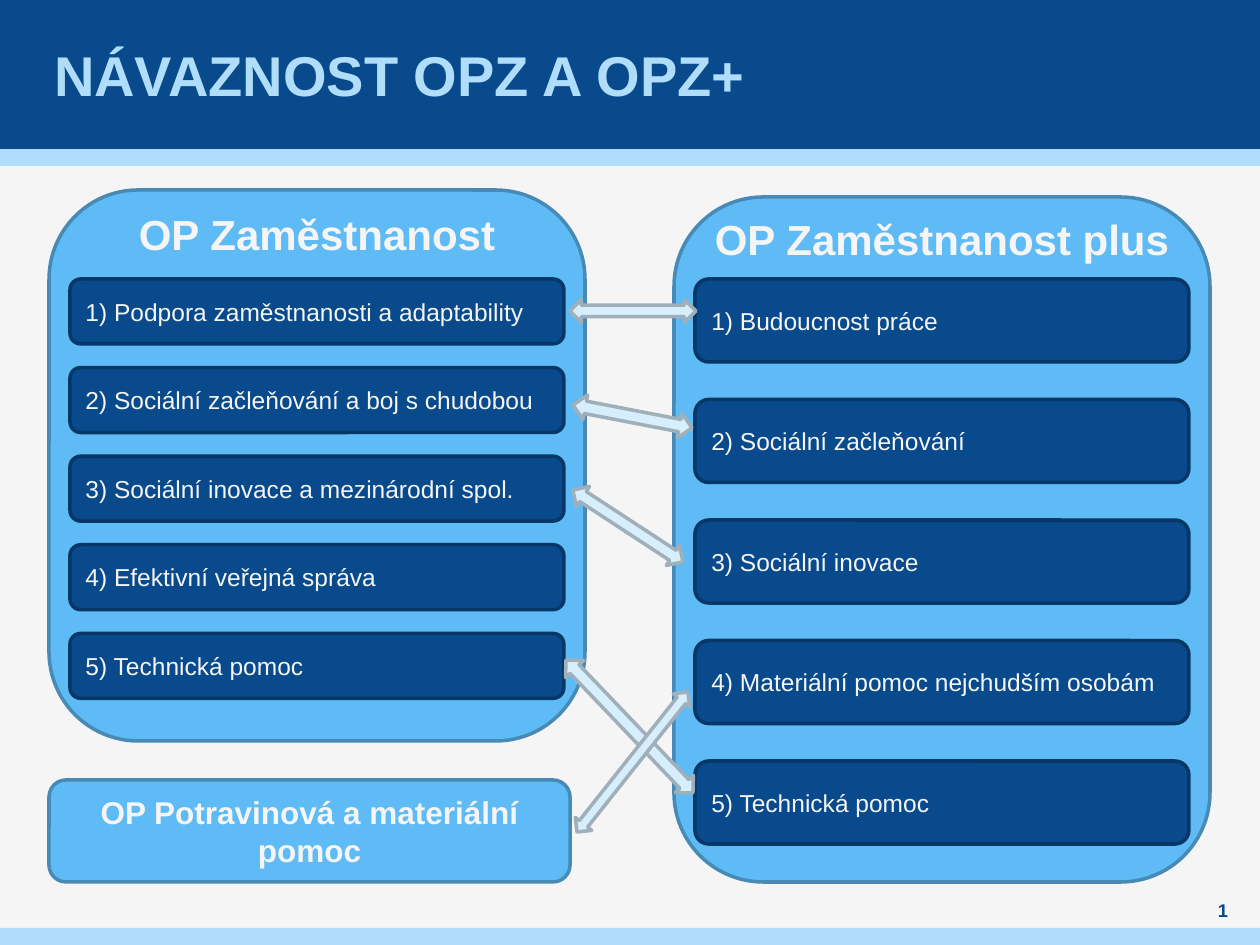
from dataclasses import dataclass
from math import atan2, degrees, hypot

from lxml.etree import SubElement
from pptx import Presentation
from pptx.dml.color import RGBColor
from pptx.enum.shapes import MSO_SHAPE as SHAPE
from pptx.enum.text import MSO_ANCHOR as ANCHOR, PP_ALIGN as ALIGN
from pptx.oxml.ns import qn
from pptx.util import Emu, Pt

TITLE = "NÁVAZNOST OPZ A OPZ+"
PAGE = "6"
FOOD_AID = "OP Potravinová a materiální pomoc"

# Areas are (left, top, width, height) in px
PROGRAMMES = [
    {
        "name": "OP Zaměstnanost",
        "panel": (49, 190, 536, 551),
        "heading_y": 234,
        "boxes": {"left": 70, "top": 279, "width": 494, "height": 65, "pitch": 88.6},
        "priorities": [
            "1) Podpora zaměstnanosti a adaptability",
            "2) Sociální začleňování a boj s chudobou",
            "3) Sociální inovace a mezinárodní spol.",
            "4) Efektivní veřejná správa",
            "5) Technická pomoc",
        ],
    },
    {
        "name": "OP Zaměstnanost plus",
        "panel": (674, 197, 536, 685),
        "heading_y": 239,
        "boxes": {"left": 695, "top": 279, "width": 494, "height": 83, "pitch": 120.5},
        "priorities": [
            "1) Budoucnost práce",
            "2) Sociální začleňování",
            "3) Sociální inovace",
            "4) Materiální pomoc nejchudším osobám",
            "5) Technická pomoc",
        ],
    },
]
FOOD_AREA = (49, 780, 521, 102)

# Links between the programmes: (start, end, thickness)
LINKS = [
    ((573, 405), (692, 428), 25),
    ((573, 490), (683, 562), 24),
    ((566, 660), (693, 793), 25),
    ((577, 832), (688, 692), 21),
    ((570, 311), (696, 311), 23),
]


@dataclass(frozen=True)
class Theme:
    font: str = "Arial"
    paper: str = "F5F5F5"
    navy: str = "084A8B"
    navy_edge: str = "063767"
    sky: str = "5FBBF5"
    sky_edge: str = "468AB5"
    pale: str = "AFDDFA"
    arrow: str = "D7EEFC"
    arrow_edge: str = "9FB0BA"
    title: float = 32
    heading: float = 24
    subheading: float = 18
    body: float = 14
    number: float = 10.5
    line: float = 2


T = Theme()
BARS = [
    ((0, 149, 1260, 17), T.pale),
    ((0, 0, 1260, 149), T.navy),
    ((0, 928, 1260, 17), T.pale),
]


def px(n):
    return Emu(round(n * 914400 / 126))


def rgb(value):
    return RGBColor.from_string(value)


def write(s, text, size, color, bold=False, align=ALIGN.LEFT, **frame):
    """Set the text of a shape; frame holds text frame attributes such as margins."""
    tf = s.text_frame
    for name, value in {"word_wrap": True, "vertical_anchor": ANCHOR.MIDDLE, **frame}.items():
        setattr(tf, name, value)
    p = tf.paragraphs[0]
    p.alignment = align
    r = p.add_run()
    r.text = text
    font = {"name": T.font, "size": Pt(size), "bold": bold}
    for name, value in font.items():
        setattr(r.font, name, value)
    r.font.color.rgb = rgb(color)
    return r


def add_shape(slide, kind, area, fill, edge=None):
    s = slide.shapes.add_shape(kind, *map(px, area))
    s.shadow.inherit = False
    s.fill.solid()
    s.fill.fore_color.rgb = rgb(fill)
    if edge:
        s.line.color.rgb = rgb(edge)
        s.line.width = Pt(T.line)
    else:
        s.line.fill.background()
    return s


def add_text(slide, area, *args, **kwargs):
    s = slide.shapes.add_textbox(*map(px, area))
    margins = dict.fromkeys(("margin_left", "margin_right", "margin_top", "margin_bottom"), 0)
    return write(s, *args, align=ALIGN.CENTER, **margins, **kwargs)


def add_title(slide):
    s = slide.shapes.title
    s.element.getparent().append(s.element)  # in front of the header bar
    s.left, s.top, s.width, s.height = map(px, (49, 0, 1160, 149))
    write(s, TITLE, T.title, T.pale, bold=True,
          margin_left=px(5), margin_right=px(5), margin_top=0, margin_bottom=0)


def add_page_number(slide):
    r = add_text(slide, (1191, 898, 64, 25), PAGE, T.number, T.navy, bold=True)
    run = r._r
    field = run.makeelement(
        qn("a:fld"), {"id": "{B6F15528-21DE-4FAA-801E-634DDDAF4B2B}", "type": "slidenum"})
    run.addprevious(field)
    field.append(run.rPr)
    SubElement(field, qn("a:t")).text = PAGE
    run.getparent().remove(run)


def add_programme(slide, name, panel, heading_y, boxes, priorities):
    add_shape(slide, SHAPE.ROUNDED_RECTANGLE, panel, T.sky, T.sky_edge)
    left, _, width, _ = panel
    add_text(slide, (left, heading_y - 25, width, 50), name, T.heading, T.paper, bold=True)
    for i, text in enumerate(priorities):
        area = (boxes["left"], boxes["top"] + i * boxes["pitch"],
                boxes["width"], boxes["height"])
        s = add_shape(slide, SHAPE.ROUNDED_RECTANGLE, area, T.navy, T.navy_edge)
        write(s, text, T.body, T.paper)


def add_link(slide, start, end, thickness):
    """Add a block arrow whose two tips lie on start and end."""
    (x1, y1), (x2, y2) = start, end
    length = hypot(x2 - x1, y2 - y1)
    area = ((x1 + x2 - length) / 2, (y1 + y2 - thickness) / 2, length, thickness)
    s = add_shape(slide, SHAPE.LEFT_RIGHT_ARROW, area, T.arrow, T.arrow_edge)
    s.rotation = degrees(atan2(y2 - y1, x2 - x1))


def main():
    prs = Presentation()
    prs.slide_width, prs.slide_height = px(1260), px(945)
    slide = prs.slides.add_slide(prs.slide_layouts.get_by_name("Title Only"))
    slide.background.fill.solid()
    slide.background.fill.fore_color.rgb = rgb(T.paper)

    for area, color in BARS:
        add_shape(slide, SHAPE.RECTANGLE, area, color)
    add_title(slide)
    add_page_number(slide)

    for programme in PROGRAMMES:
        add_programme(slide, **programme)
    s = add_shape(slide, SHAPE.ROUNDED_RECTANGLE, FOOD_AREA, T.sky, T.sky_edge)
    write(s, FOOD_AID, T.subheading, T.paper, bold=True, align=ALIGN.CENTER)
    for link in LINKS:
        add_link(slide, *link)

    prs.save("out.pptx")


if __name__ == "__main__":
    main()
